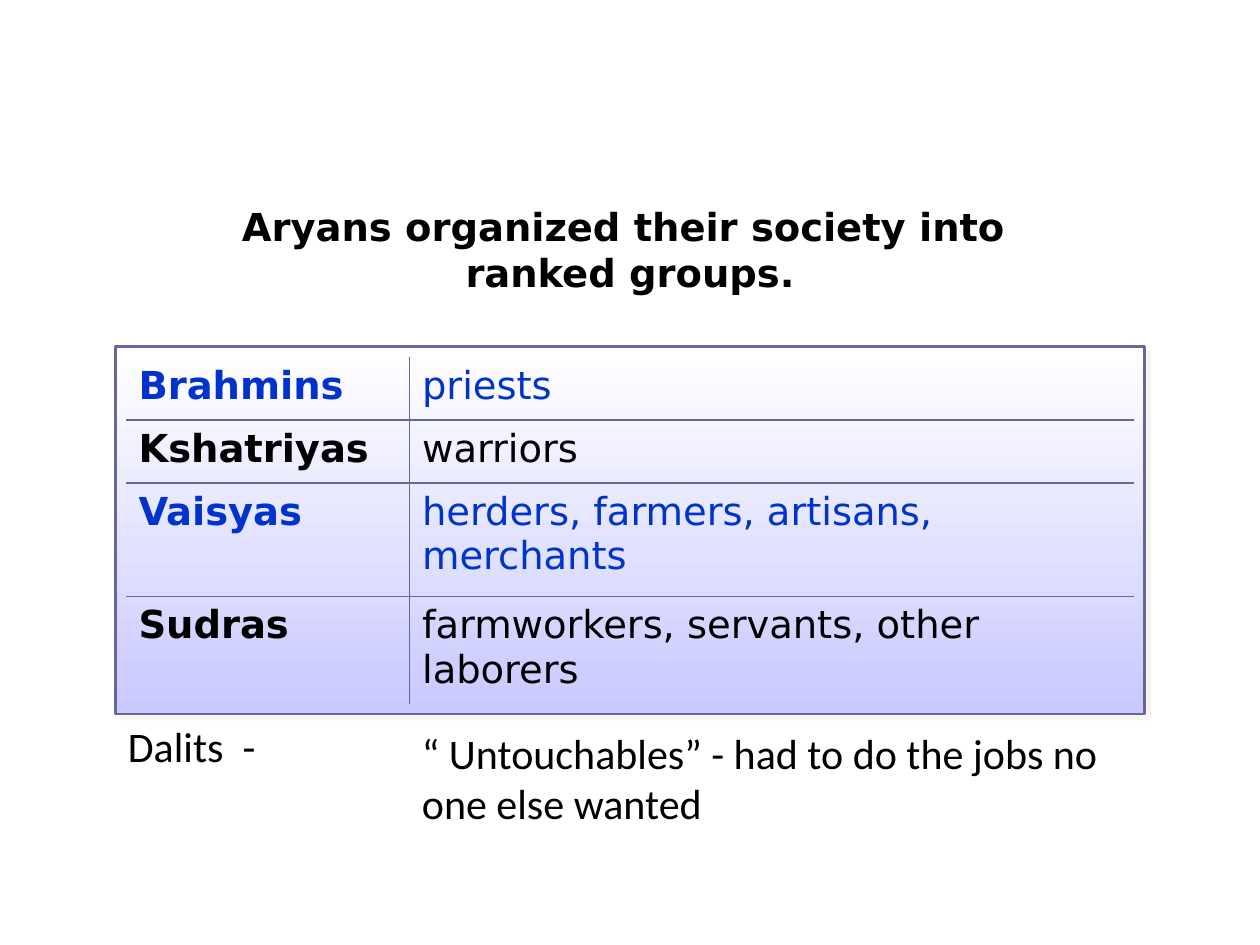
from lxml.etree import SubElement
from pptx import Presentation
from pptx.dml.color import RGBColor
from pptx.enum.shapes import MSO_SHAPE as Shape
from pptx.enum.text import MSO_ANCHOR as Anchor, MSO_AUTO_SIZE as AutoSize, PP_ALIGN as Align
from pptx.oxml.ns import qn
from pptx.util import Pt

BLACK, BLUE, SLATE = "000000", "0033CC", "666699"
CASTES = [
    ("Brahmins", "priests", BLUE),
    ("Kshatriyas", "warriors", BLACK),
    ("Vaisyas", "herders, farmers, artisans, merchants", BLUE),
    ("Sudras", "farmworkers, servants, other laborers", BLACK),
]
COLUMN_WIDTHS = (162, 414)
ROW_HEIGHTS = (36, 36, 64.8, 61.2)
HEADING = {"name": "DejaVu Sans", "size": Pt(22), "bold": True}
PLAIN = {**HEADING, "bold": False}
NOTE = {"name": "Calibri", "size": Pt(24), "bold": False}


def rgb(value):
    return RGBColor.from_string(value)


def write(frame, text, style, color=BLACK, align=Align.LEFT):
    frame.word_wrap = True
    frame.text = text
    paragraph = frame.paragraphs[0]
    paragraph.alignment = align
    for run in paragraph.runs:
        for name, value in style.items():
            setattr(run.font, name, value)
        run.font.color.rgb = rgb(color)


def add_title(slide, text):
    title = slide.shapes.title
    place = {"left": 66, "top": 112.3, "width": 588, "height": 60}
    for name, value in place.items():
        setattr(title, name, Pt(value))
    frame = title.text_frame
    write(frame, text, HEADING, align=Align.CENTER)
    frame.vertical_anchor = Anchor.TOP
    frame.auto_size = AutoSize.SHAPE_TO_FIT_TEXT


def add_panel(slide):
    panel = slide.shapes.add_shape(Shape.RECTANGLE, Pt(66), Pt(198), Pt(588), Pt(210))
    panel.fill.gradient()
    panel.fill.gradient_angle = 270
    for stop, position, color in zip(panel.fill.gradient_stops, (0, 1), ("FFFFFF", "C9C9FF")):
        stop.position = position
        stop.color.rgb = rgb(color)
    panel.line.color.rgb = rgb(SLATE)
    panel.line.width = Pt(1.5)
    add_shadow(panel)


def add_shadow(shape):
    shape.shadow.inherit = False
    effects = shape.element.spPr.find(qn("a:effectLst"))
    shadow = SubElement(effects, qn("a:outerShdw"), blurRad="0", dist=str(Pt(4.2)),
                        dir="2700000", algn="ctr", rotWithShape="0")
    color = SubElement(shadow, qn("a:srgbClr"), val="EEECE1")
    SubElement(color, qn("a:alpha"), val="50000")


def set_borders(cell, inner_sides):
    """Rule the inner sides of a cell and leave its outer sides open."""
    properties = cell._tc.get_or_add_tcPr()
    for side in "LRTB":
        border = SubElement(properties, qn(f"a:ln{side}"), w=str(Pt(1)))
        if side in inner_sides:
            fill = SubElement(border, qn("a:solidFill"))
            SubElement(fill, qn("a:srgbClr"), val=SLATE)
        else:
            SubElement(border, qn("a:noFill"))


def add_caste_table(slide):
    table = slide.shapes.add_table(len(CASTES), 2, Pt(72), Pt(204), Pt(576), Pt(198)).table
    table.first_row = table.horz_banding = False
    for column, width in zip(table.columns, COLUMN_WIDTHS):
        column.width = Pt(width)
    for row, height in zip(table.rows, ROW_HEIGHTS):
        row.height = Pt(height)
    last = len(CASTES) - 1
    for index, (caste, role, color) in enumerate(CASTES):
        row_sides = ("T" if index > 0 else "") + ("B" if index < last else "")
        for column, (text, style, side) in enumerate([(caste, HEADING, "R"), (role, PLAIN, "L")]):
            cell = table.cell(index, column)
            write(cell.text_frame, text, style, color)
            set_borders(cell, row_sides + side)
            cell.fill.background()


def add_note(slide, text, left, top, width):
    box = slide.shapes.add_textbox(Pt(left), Pt(top), Pt(width), Pt(65.5))
    write(box.text_frame, text, NOTE)
    box.text_frame.auto_size = AutoSize.SHAPE_TO_FIT_TEXT


def main():
    deck = Presentation()
    deck.slide_width, deck.slide_height = Pt(720), Pt(540)
    slide = deck.slides.add_slide(deck.slide_layouts[5])
    add_panel(slide)
    add_title(slide, "Aryans organized their society into \vranked groups.")
    add_caste_table(slide)
    add_note(slide, "Dalits  -", 66, 408, 168)
    add_note(slide, "“ Untouchables” - had to do the jobs no one else wanted", 234, 412, 420)
    deck.save("out.pptx")


if __name__ == "__main__":
    main()
